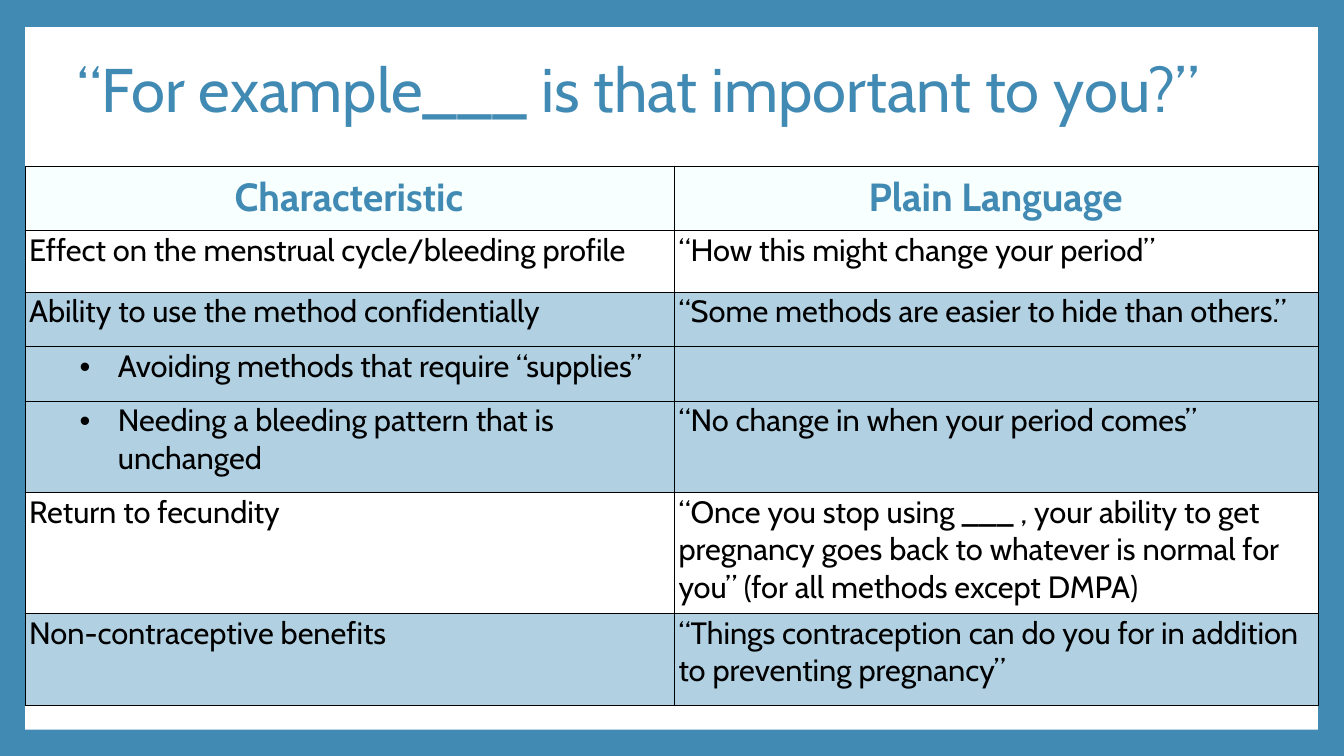
from lxml import etree
from pptx import Presentation
from pptx.dml.color import RGBColor
from pptx.enum.shapes import MSO_SHAPE
from pptx.enum.text import MSO_ANCHOR, PP_ALIGN
from pptx.oxml import parse_xml
from pptx.oxml.ns import nsdecls, qn
from pptx.util import Inches, Pt

RECTANGLE = MSO_SHAPE.RECTANGLE
MIDDLE, BOTTOM = MSO_ANCHOR.MIDDLE, MSO_ANCHOR.BOTTOM
CENTER = PP_ALIGN.CENTER

FONT = "Cabin"
BLUE, PALE_BLUE, PALE_CYAN = "418AB3", "B1D1E3", "CCFFFF"
BLACK, WHITE = "000000", "FFFFFF"

TITLE = "“For example___ is that important to you?”"
HEADINGS = ("Characteristic", "Plain Language")
COLUMN_WIDTHS = (6.44, 6.39)
HEADING_HEIGHT = 0.64
# height, fill, bulleted, characteristic, plain language
ROWS = [
    (0.61, None, False, "Effect on the menstrual cycle/bleeding profile",
     "“How this might change your period”"),
    (0.54, PALE_BLUE, False, "Ability to use the method confidentially",
     "“Some methods are easier to hide than others.”"),
    (0.54, PALE_BLUE, True, "Avoiding methods that require “supplies”", ""),
    (0.91, PALE_BLUE, True, "Needing a bleeding pattern that is unchanged",
     "“No change in when your period comes”"),
    (1.17, None, False, "Return to fecundity",
     "“Once you stop using ___ , your ability to get pregnancy goes back to "
     "whatever is normal for you” (for all methods except DMPA)"),
    (0.91, PALE_BLUE, False, "Non-contraceptive benefits",
     "“Things contraception can do you for in addition to preventing pregnancy”"),
]


def color(value):
    return RGBColor.from_string(value)


def style_font(font, size, font_color, bold=False):
    font.name = FONT
    font.size = Pt(size)
    font.bold = bold
    font.color.rgb = color(font_color)


def add_panel(page):
    panel = page.shapes.add_shape(
        RECTANGLE, Inches(0.25), Inches(0.27), Inches(12.82), Inches(6.97))
    panel.shadow.inherit = False
    panel.fill.solid()
    panel.fill.fore_color.rgb = color(WHITE)
    panel.line.fill.background()


def add_title(page):
    box = page.shapes.add_textbox(
        Inches(0.67), Inches(0.18), Inches(12.17), Inches(1.48))
    frame = box.text_frame
    frame.word_wrap = True
    frame.vertical_anchor = MIDDLE
    frame.text = TITLE
    para = frame.paragraphs[0]
    para.line_spacing = 0.9
    style_font(para.runs[0].font, 44, BLUE)


def add_bullet(para):
    properties = para._p.get_or_add_pPr()
    properties.set("lvl", "1")
    properties.set("marL", str(Inches(0.88)))
    properties.set("indent", str(Inches(-0.38)))
    properties.append(parse_xml(
        f'<a:buFont {nsdecls("a")} typeface="Arial"/>'))
    properties.append(parse_xml(f'<a:buChar {nsdecls("a")} char="•"/>'))


def add_borders(cell):
    """Draw a thin black line on all four sides; lines precede the fill."""
    properties = cell._tc.get_or_add_tcPr()
    for position, side in enumerate(("lnL", "lnR", "lnT", "lnB")):
        properties.insert(position, parse_xml(
            f'<a:{side} {nsdecls("a")} w="{Pt(1)}"><a:solidFill>'
            f'<a:srgbClr val="{BLACK}"/></a:solidFill></a:{side}>'))


def fill_cell(cell, fill, opacity=100):
    if fill is None:
        cell.fill.background()
        return
    cell.fill.solid()
    cell.fill.fore_color.rgb = color(fill)
    if opacity < 100:
        swatch = cell._tc.tcPr.find(".//" + qn("a:srgbClr"))
        etree.SubElement(swatch, qn("a:alpha"), val=str(opacity * 1000))


def write_cell(cell, text, size, font_color, bold=False, bulleted=False):
    cell.margin_left, cell.margin_top = Inches(0.04), Inches(0.01)
    cell.margin_right, cell.margin_bottom = Inches(0.06), Inches(0.09)
    cell.text = text
    para = cell.text_frame.paragraphs[0]
    if bulleted:
        add_bullet(para)
    for span in para.runs:
        style_font(span.font, size, font_color, bold)
    add_borders(cell)


def add_language_table(page):
    heights = [HEADING_HEIGHT] + [row[0] for row in ROWS]
    table = page.shapes.add_table(
        len(heights), len(COLUMN_WIDTHS), Inches(0.25), Inches(1.65),
        Inches(sum(COLUMN_WIDTHS)), Inches(sum(heights))).table
    table.first_row = table.horz_banding = False
    for column, width in zip(table.columns, COLUMN_WIDTHS):
        column.width = Inches(width)
    for row, height in zip(table.rows, heights):
        row.height = Inches(height)

    for column, heading in enumerate(HEADINGS):
        cell = table.cell(0, column)
        fill_cell(cell, PALE_CYAN, opacity=14)
        write_cell(cell, heading, 28, BLUE, bold=True)
        cell.vertical_anchor = BOTTOM
        cell.text_frame.paragraphs[0].alignment = CENTER

    for row, (_, fill, bulleted, *texts) in enumerate(ROWS, start=1):
        for column, text in enumerate(texts):
            cell = table.cell(row, column)
            fill_cell(cell, fill)
            write_cell(cell, text, 22, BLACK,
                       bulleted=bulleted and column == 0)


def main():
    deck = Presentation()
    deck.slide_width, deck.slide_height = Inches(13.33), Inches(7.5)
    page = deck.slides.add_slide(deck.slide_layouts[6])
    page.background.fill.solid()
    page.background.fill.fore_color.rgb = color(BLUE)
    add_panel(page)
    add_title(page)
    add_language_table(page)
    deck.save("out.pptx")


if __name__ == "__main__":
    main()
